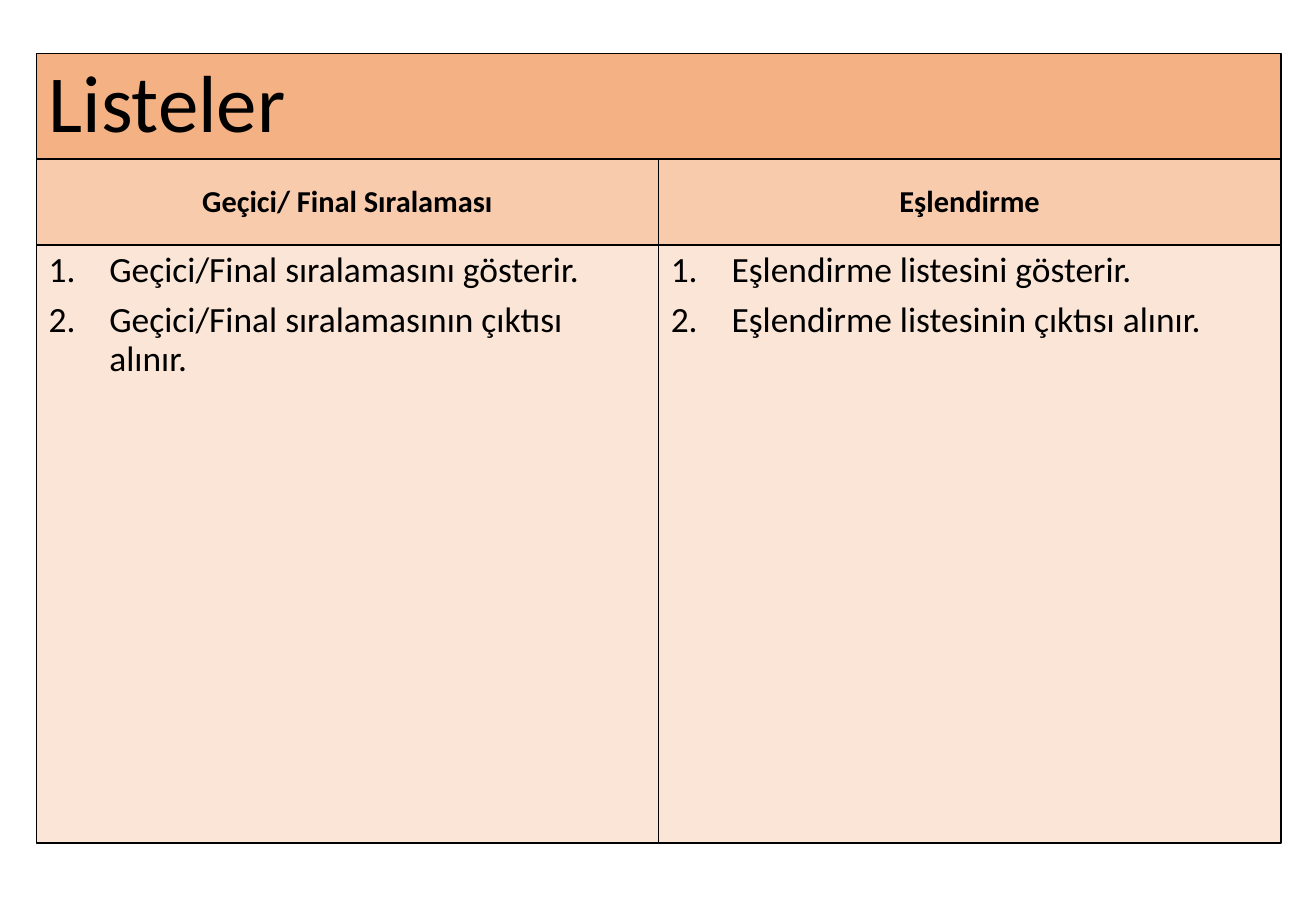
from lxml import etree
from pptx import Presentation
from pptx.dml.color import RGBColor
from pptx.enum.text import MSO_ANCHOR, MSO_AUTO_SIZE, PP_ALIGN
from pptx.oxml.ns import qn
from pptx.util import Inches, Pt

LEFT, COL_W = 0.3, 5.12
TITLE_TOP, TITLE_H = 0.44, 0.87
HEAD_TOP, HEAD_H = 1.31, 0.71
LIST_TOP, LIST_H = 2.02, 4.92

COLUMNS = [
    ("Geçici/ Final Sıralaması",
     ["Geçici/Final sıralamasını gösterir.",
      "Geçici/Final sıralamasının çıktısı alınır."]),
    ("Eşlendirme",
     ["Eşlendirme listesini gösterir.",
      "Eşlendirme listesinin çıktısı alınır."]),
]


def rgb(color):
    return RGBColor.from_string(color)


def fill_box(sp, box, fill, lines, size, bold=False, align=PP_ALIGN.LEFT,
             anchor=MSO_ANCHOR.MIDDLE, before=7.5):
    """Place a placeholder as an outlined box and write its paragraphs."""
    sp.left, sp.top, sp.width, sp.height = [Inches(v) for v in box]
    sp.fill.solid()
    sp.fill.fore_color.rgb = rgb(fill)
    sp.line.color.rgb = rgb("000000")
    sp.line.width = Pt(1)
    tf = sp.text_frame
    tf.text = "\n".join(lines)
    tf.word_wrap = True
    tf.auto_size = MSO_AUTO_SIZE.NONE
    tf.vertical_anchor = anchor
    for p in tf.paragraphs:
        p.alignment = align
        p.line_spacing = 0.9
        p.space_before = Pt(before)
        font = p.runs[0].font
        font.name, font.size, font.bold = "Calibri", Pt(size), bold
        font.color.rgb = rgb("000000")


prs = Presentation()
prs.slide_width, prs.slide_height = Inches(10.83), Inches(7.5)
comparison = prs.slide_layouts.get_by_name("Comparison")
s = prs.slides.add_slide(comparison)
title, *bodies = s.placeholders

fill_box(title, (LEFT, TITLE_TOP, 2 * COL_W, TITLE_H), "F4B183",
         ["Listeler"], 48, before=0)

for i, (heading, steps) in enumerate(COLUMNS):
    x = LEFT + i * COL_W
    head, numbered = bodies[2 * i:2 * i + 2]
    fill_box(head, (x, HEAD_TOP, COL_W, HEAD_H), "F8CBAD", [heading], 18,
             bold=True, align=PP_ALIGN.CENTER)
    fill_box(numbered, (x, LIST_TOP, COL_W, LIST_H), "FBE5D6", steps, 21,
             anchor=MSO_ANCHOR.TOP)
    for p in numbered.text_frame.paragraphs:
        pPr = p._p.get_or_add_pPr()
        pPr.set("marL", str(Inches(0.5)))
        pPr.set("indent", str(Inches(-0.5)))
        bullet_font = etree.SubElement(pPr, qn("a:buFont"))
        bullet_font.set("typeface", "+mj-lt")
        etree.SubElement(pPr, qn("a:buAutoNum")).set("type", "arabicPeriod")

prs.save("out.pptx")
